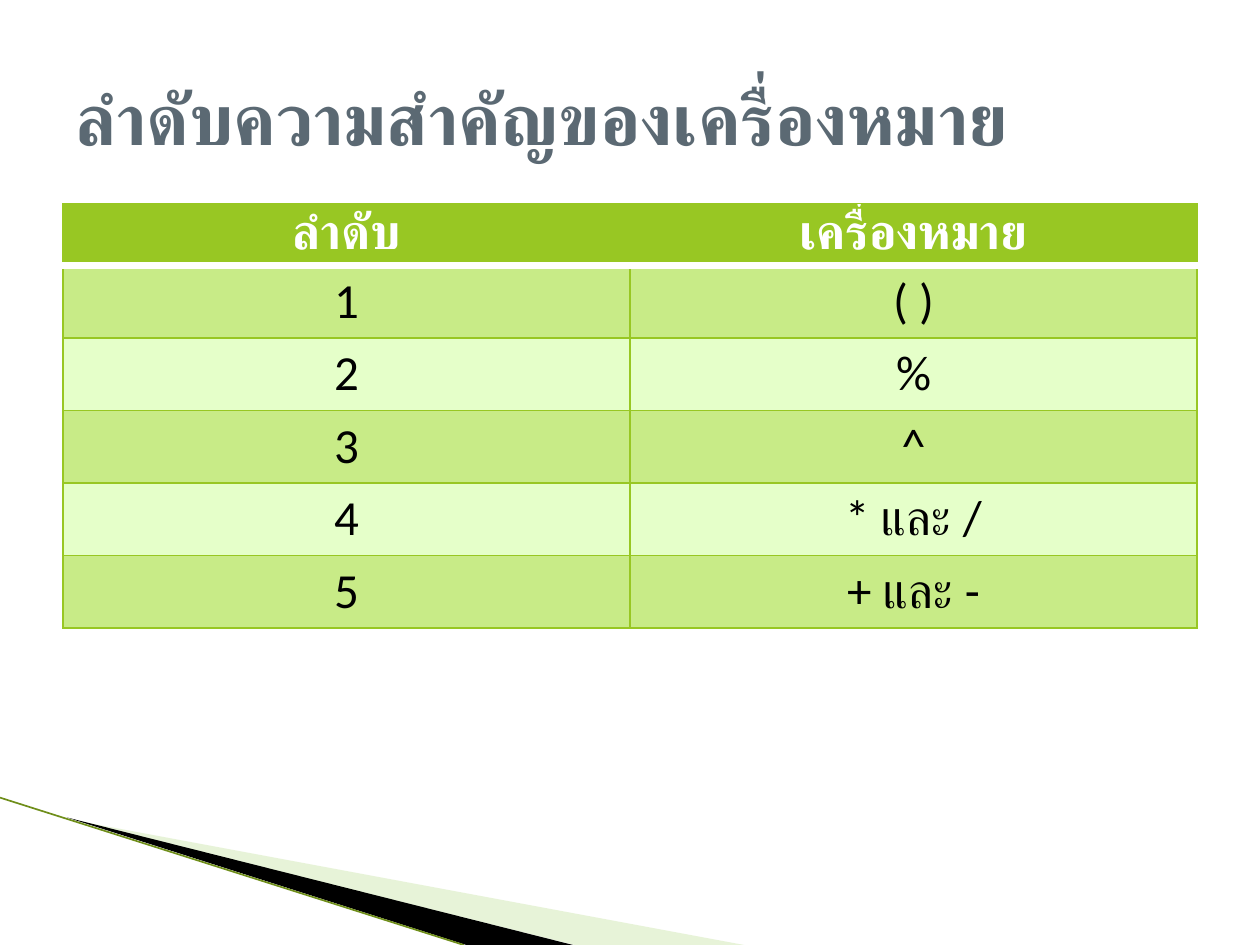
"""Build a slide showing the order of precedence of operators."""
from lxml.etree import SubElement
from pptx import Presentation
from pptx.dml.color import RGBColor
from pptx.enum.shapes import MSO_CONNECTOR
from pptx.enum.text import MSO_ANCHOR, PP_ALIGN
from pptx.oxml.ns import qn
from pptx.util import Cm, Pt

FONT = "Calibri"
WHITE = RGBColor(0xFF, 0xFF, 0xFF)
BLACK = RGBColor(0x00, 0x00, 0x00)
GREEN = RGBColor(0x98, 0xC7, 0x23)
BAND_DARK = RGBColor(0xC8, 0xEB, 0x87)
BAND_LIGHT = RGBColor(0xE5, 0xFF, 0xC9)
WEDGE_GREEN = RGBColor(0xC5, 0xE1, 0x9F)
OLIVE = RGBColor(0x6F, 0x8E, 0x1A)
SLATE = RGBColor(0x5B, 0x69, 0x73)

TITLE = "ลำดับความสำคัญของเครื่องหมาย"
ROWS = [
    ("ลำดับ", "เครื่องหมาย"),
    ("1", "( )"),
    ("2", "%"),
    ("3", "^"),
    ("4", "* และ /"),
    ("5", "+ และ -"),
]
WEDGES = [
    ([(1.4, 16.52), (15.0, 19.05), (11.58, 19.05)], WEDGE_GREEN, 40),
    ([(1.35, 16.48), (11.55, 19.05), (9.4, 19.05)], BLACK, 100),
]
LEFT, WIDTH = Cm(1.27), Cm(22.86)
TABLE_TOP, ROW_HEIGHT = Cm(4.11), Cm(1.04)


def style_paragraph(paragraph, size, color, bold):
    paragraph.font.name = FONT
    for span in paragraph.runs:
        span.font.name = FONT
        span.font.size = Pt(size)
        span.font.bold = bold
        span.font.color.rgb = color


def set_border(cell, side, color, width):
    line = SubElement(cell._tc.get_or_add_tcPr(), qn(f"a:ln{side}"), w=str(Pt(width)))
    fill = SubElement(line, qn("a:solidFill"))
    SubElement(fill, qn("a:srgbClr"), val=str(color))


def add_wedge(slide, points, color, opacity):
    corners = [(Cm(x), Cm(y)) for x, y in points]
    builder = slide.shapes.build_freeform(*corners[0])
    builder.add_line_segments(corners[1:])
    wedge = builder.convert_to_shape()
    wedge.shadow.inherit = False
    wedge.line.fill.background()
    wedge.fill.solid()
    wedge.fill.fore_color.rgb = color
    if opacity < 100:
        tone = wedge._element.spPr.find(qn("a:solidFill"))[0]
        SubElement(tone, qn("a:alpha"), val=str(opacity * 1000))


def add_edge(slide):
    edge = slide.shapes.add_connector(
        MSO_CONNECTOR.STRAIGHT, 0, Cm(16.08), Cm(9.35), Cm(19.05))
    edge.line.color.rgb = OLIVE
    edge.line.width = Pt(0.95)
    SubElement(edge._element.spPr, qn("a:effectLst"))


def add_title(slide):
    box = slide.shapes.add_textbox(LEFT, Cm(0.76), WIDTH, Cm(3.18))
    frame = box.text_frame
    frame.word_wrap = True
    frame.vertical_anchor = MSO_ANCHOR.MIDDLE
    frame.text = TITLE
    style_paragraph(frame.paragraphs[0], 41, SLATE, True)


def add_precedence_table(slide):
    table = slide.shapes.add_table(
        len(ROWS), 2, LEFT, TABLE_TOP, WIDTH, ROW_HEIGHT * len(ROWS)).table
    table.horz_banding = False
    for row, labels in enumerate(ROWS):
        header = row == 0
        band = BAND_DARK if row % 2 else BAND_LIGHT
        for column, label in enumerate(labels):
            cell = table.cell(row, column)
            for side in "LRTB":
                divider = (row, side) in [(0, "B"), (1, "T")]
                set_border(cell, side, *((WHITE, 4.33) if divider else (GREEN, 0.75)))
            cell.fill.solid()
            cell.fill.fore_color.rgb = GREEN if header else band
            cell.text_frame.text = label
            paragraph = cell.text_frame.paragraphs[0]
            paragraph.alignment = PP_ALIGN.CENTER
            style_paragraph(paragraph, 28, WHITE if header else BLACK, header)


def main():
    deck = Presentation()
    deck.slide_width, deck.slide_height = Cm(25.4), Cm(19.05)
    page = deck.slides.add_slide(deck.slide_layouts[6])
    for points, color, opacity in WEDGES:
        add_wedge(page, points, color, opacity)
    add_edge(page)
    add_precedence_table(page)
    add_title(page)
    deck.save("out.pptx")


if __name__ == "__main__":
    main()
